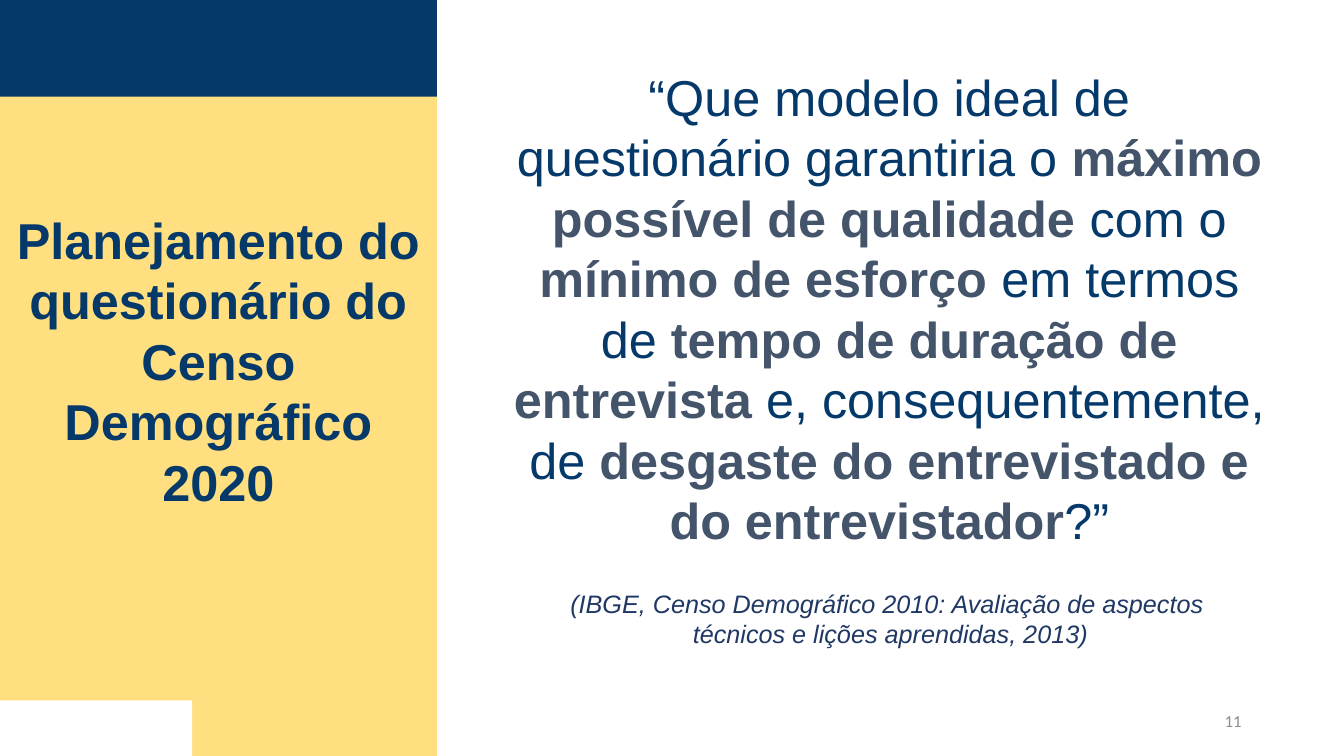
"""Build the slide on planning the 2020 census questionnaire."""
from lxml.etree import SubElement
from pptx import Presentation
from pptx.dml.color import RGBColor
from pptx.enum.shapes import MSO_SHAPE
from pptx.enum.text import MSO_ANCHOR, MSO_AUTO_SIZE, PP_ALIGN
from pptx.oxml.ns import qn
from pptx.util import Pt

PX = 9525
NAVY, SLATE = "05396A", "44546A"


def rgb(value):
    return RGBColor.from_string(value)


def set_text(shape, box, lines, size, color, font="Arial", align=PP_ALIGN.CENTER):
    shape.left, shape.top, shape.width, shape.height = [v * PX for v in box]
    tf = shape.text_frame
    tf.word_wrap = True
    tf.auto_size = MSO_AUTO_SIZE.NONE
    tf.vertical_anchor = MSO_ANCHOR.TOP
    tf.text = "\n".join(lines)
    for p in tf.paragraphs:
        p.alignment = align
        p.font.size = Pt(size)
        p.font.name = font
        p.font.color.rgb = rgb(color)
    return tf


prs = Presentation()
prs.slide_width, prs.slide_height = 1280 * PX, 720 * PX
s = prs.slides.add_slide(prs.slide_layouts[5])

panels = [
    ((0, 0, 416, 720), "FFC000", 50),
    ((0, 0, 416, 92), NAVY, 100),
    ((0, 667, 183, 53), "FFFFFF", 100),
]
for box, color, opacity in panels:
    sp = s.shapes.add_shape(MSO_SHAPE.RECTANGLE, *[v * PX for v in box])
    sp.shadow.inherit = False
    sp.line.fill.background()
    sp.fill.solid()
    sp.fill.fore_color.rgb = rgb(color)
    if opacity < 100:
        clr = sp._element.spPr.find(qn("a:solidFill"))[0]
        SubElement(clr, qn("a:alpha")).set("val", str(opacity * 1000))

title = s.shapes.title
s.shapes._spTree.append(title._element)
tf = set_text(title, (0, 194, 416, 300),
              ["Planejamento do questionário do Censo Demográfico 2020"], 36, NAVY)
tf.paragraphs[0].font.bold = True

quote = [
    ("“Que modelo ideal de questionário garantiria o ", False),
    ("máximo possível de qualidade", True),
    (" com o ", False),
    ("mínimo de esforço ", True),
    ("em termos de ", False),
    ("tempo de duração de entrevista ", True),
    ("e, consequentemente, de ", False),
    ("desgaste do entrevistado e do entrevistador", True),
    ("?”", False),
]
tf = set_text(s.shapes.add_textbox(0, 0, 0, 0), (471, 58, 752, 417), [""], 36, NAVY)
for text, strong in quote:
    r = tf.paragraphs[0].add_run()
    r.text = text
    r.font.size = Pt(36)
    r.font.name = "Arial"
    r.font.bold = strong
    r.font.color.rgb = rgb(SLATE if strong else NAVY)

citation = ["(IBGE, Censo Demográfico 2010: Avaliação de aspectos ",
            "técnicos e lições aprendidas, 2013)"]
tf = set_text(s.shapes.add_textbox(0, 0, 0, 0), (440, 512, 816, 142),
              citation, 18, "203864")
tf.margin_top = 48 * PX
for p in tf.paragraphs:
    p.font.italic = True

tf = set_text(s.shapes.add_textbox(0, 0, 0, 0), (904, 667, 288, 38),
              ["11"], 12, "8C8C8C", "Calibri", PP_ALIGN.RIGHT)
tf.vertical_anchor = MSO_ANCHOR.MIDDLE

prs.save("out.pptx")
